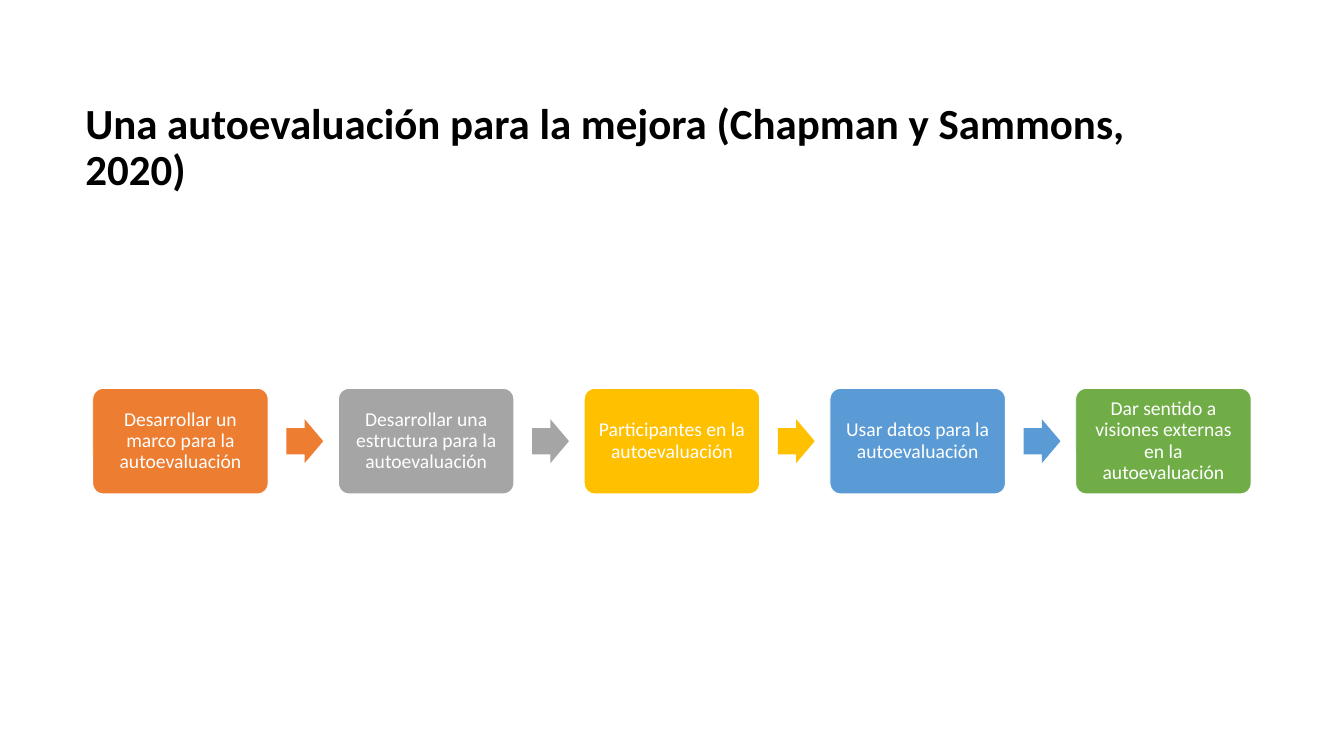
from pptx import Presentation
from pptx.dml.color import RGBColor
from pptx.enum.shapes import MSO_SHAPE as Shape
from pptx.enum.text import MSO_ANCHOR as Anchor, MSO_AUTO_SIZE as AutoSize, PP_ALIGN as Align
from pptx.util import Inches, Pt

TITLE = "Una autoevaluación para la mejora (Chapman y Sammons, 2020)"
STEPS = [
    ("Desarrollar un marco para la autoevaluación", "orange"),
    ("Desarrollar una estructura para la autoevaluación", "gray"),
    ("Participantes en la autoevaluación", "gold"),
    ("Usar datos para la autoevaluación", "blue"),
    ("Dar sentido a visiones externas en la autoevaluación", "green"),
]
COLORS = {
    "black": "000000", "white": "FFFFFF", "orange": "ED7D31", "gray": "A5A5A5",
    "gold": "FFC000", "blue": "5B9BD5", "green": "70AD47",
}
LEFT, MIDDLE, PITCH = 1.38, 6.565, 3.657
STEP_WIDTH, STEP_HEIGHT = 2.61, 1.57
ARROW_OFFSET, ARROW_WIDTH, ARROW_HEIGHT = 2.88, 0.55, 0.65


def rgb(name):
    return RGBColor.from_string(COLORS[name])


def write(shape, text, size, color, align, bold=False):
    frame = shape.text_frame
    frame.word_wrap = True
    frame.auto_size = AutoSize.NONE
    frame.vertical_anchor = Anchor.MIDDLE
    para = frame.paragraphs[0]
    para.alignment = align
    para.line_spacing = 0.9
    span = para.add_run()
    span.text = text
    span.font.name = "Calibri"
    span.font.size = Pt(size)
    span.font.bold = bold
    span.font.color.rgb = rgb(color)


def add_block(page, kind, left, width, height, color, adjustments):
    block = page.shapes.add_shape(
        kind, Inches(left), Inches(MIDDLE - height / 2), Inches(width), Inches(height))
    block.shadow.inherit = False
    block.fill.solid()
    block.fill.fore_color.rgb = rgb(color)
    block.line.fill.background()
    for index, value in enumerate(adjustments):
        block.adjustments[index] = value
    return block


def add_step(page, left, text, color):
    step = add_block(page, Shape.ROUNDED_RECTANGLE, left, STEP_WIDTH, STEP_HEIGHT, color, [0.1])
    step.line.color.rgb = rgb("white")
    step.line.width = Pt(1)
    frame = step.text_frame
    frame.margin_left = frame.margin_right = Inches(0.14)
    frame.margin_top = frame.margin_bottom = Inches(0.14)
    write(step, text, 21, "white", Align.CENTER)


def main():
    """Build the five-step self-evaluation slide."""
    deck = Presentation()
    deck.slide_width, deck.slide_height = Inches(20), Inches(11.25)
    page = deck.slides.add_slide(deck.slide_layouts[5])
    title = page.shapes.title
    title.left, title.top = Inches(1.17), Inches(1.13)
    title.width, title.height = Inches(17.25), Inches(2.17)
    write(title, TITLE, 46, "black", Align.LEFT, bold=True)
    for index, (text, color) in enumerate(STEPS):
        left = LEFT + index * PITCH
        add_step(page, left, text, color)
        if index < len(STEPS) - 1:
            add_block(page, Shape.RIGHT_ARROW, left + ARROW_OFFSET,
                      ARROW_WIDTH, ARROW_HEIGHT, color, [0.6, 0.5])
    deck.save("out.pptx")


if __name__ == "__main__":
    main()
